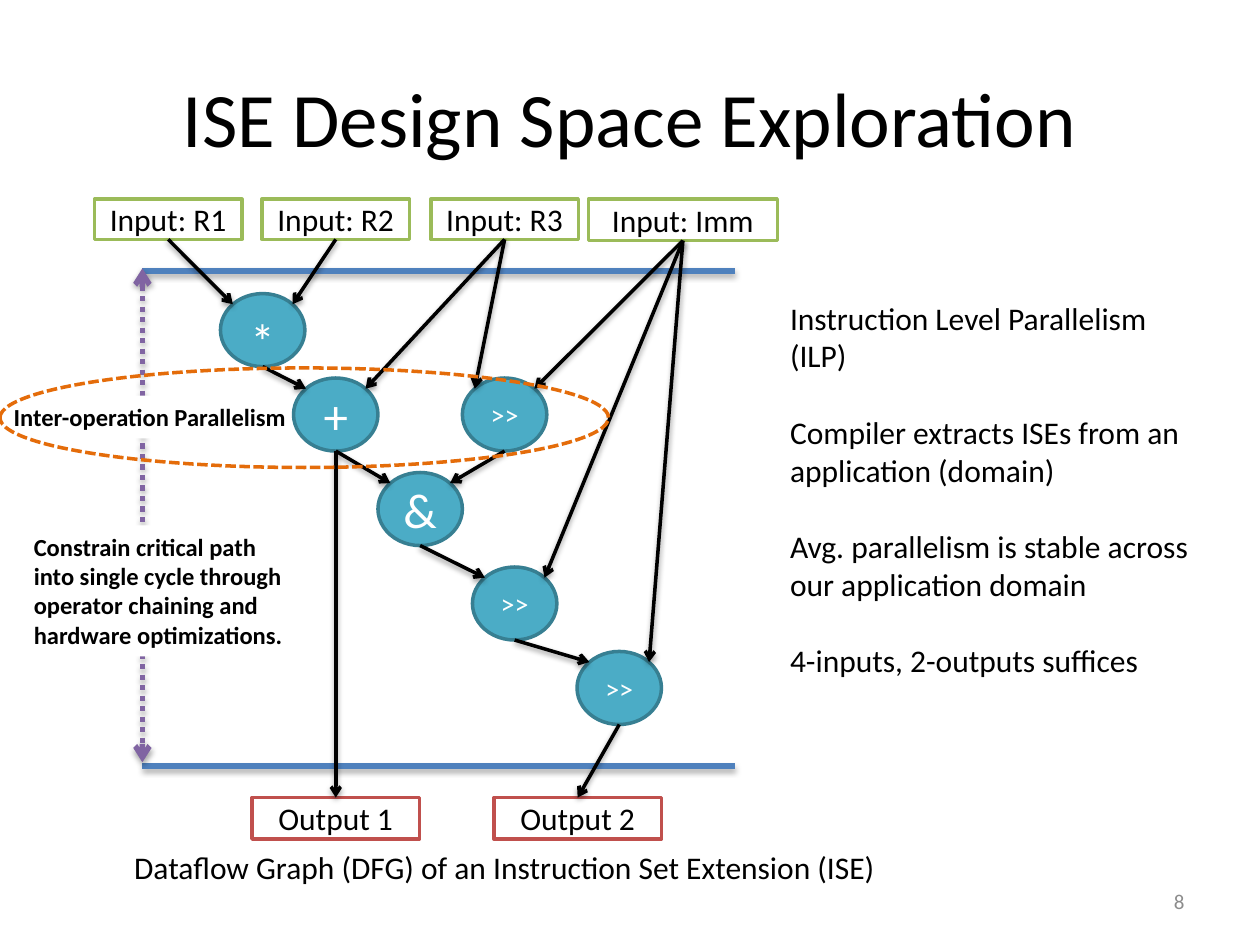
"""Build the ISE design space exploration slide with its dataflow graph."""
from math import sqrt

from lxml.etree import SubElement
from pptx import Presentation
from pptx.dml.color import RGBColor
from pptx.enum.dml import MSO_LINE
from pptx.enum.shapes import MSO_CONNECTOR, MSO_SHAPE
from pptx.enum.text import MSO_ANCHOR, MSO_AUTO_SIZE, PP_ALIGN
from pptx.oxml.ns import qn
from pptx.util import Inches, Pt

COLORS = {
    "black": "000000", "white": "FFFFFF", "gray": "8C8C8C", "blue": "4F81BD",
    "teal": "4BACC6", "dark teal": "377F92", "green": "9BBB59",
    "red": "C0504D", "purple": "8064A2", "orange": "E46C0A",
}
COLORS = {name: RGBColor.from_string(value) for name, value in COLORS.items()}


def write_text(box, text, size=18, color="black", bold=False,
               align=PP_ALIGN.LEFT, anchor=MSO_ANCHOR.MIDDLE, gap=0):
    frame = box.text_frame
    frame.word_wrap = True
    frame.auto_size = MSO_AUTO_SIZE.NONE
    frame.vertical_anchor = anchor
    frame.text = text
    for index, para in enumerate(frame.paragraphs):
        props = para._p.get_or_add_pPr()
        props.set("marL", "0")
        props.set("indent", "0")
        para.alignment = align
        para.space_before = Pt(gap if index else 0)
        SubElement(props, qn("a:buNone"))
        for span in para.runs:
            span.font.name = "Calibri"
            span.font.size = Pt(size)
            span.font.bold = bold
            span.font.color.rgb = COLORS[color]


def add_line(start, end, color="black", width=2, dash=None, ends=("tailEnd",), effect=1):
    line = page.shapes.add_connector(
        MSO_CONNECTOR.STRAIGHT, *(Inches(value) for value in (*start, *end)))
    line.line.color.rgb = COLORS[color]
    line.line.width = Pt(width)
    if dash:
        line.line.dash_style = dash
    for name in ends:
        SubElement(line.line._get_or_add_ln(), qn(f"a:{name}"), type="arrow")
    for reference in line._element.iter(qn("a:effectRef")):
        reference.set("idx", str(effect))
    return line


deck = Presentation()
deck.slide_width, deck.slide_height = Inches(10), Inches(7.5)
page = deck.slides.add_slide(deck.slide_layouts[1])

title, body = page.placeholders
title.left, title.top, title.width, title.height = map(Inches, (0.5, 0.3, 9, 1.25))
write_text(title, "ISE Design Space Exploration", size=44, align=PP_ALIGN.CENTER)

body.left, body.top, body.width, body.height = map(Inches, (6.17, 2.32, 3.42, 3.43))
findings = [
    "Instruction Level Parallelism (ILP)",
    "Compiler extracts ISEs from an application (domain)",
    "Avg. parallelism is stable across our application domain",
    "4-inputs, 2-outputs suffices",
]
write_text(body, "\n".join(findings), anchor=MSO_ANCHOR.TOP, gap=22)

for level in (2.15, 6.08):
    add_line((1.13, level), (5.83, level), "blue", 3, ends=(), effect=2)
add_line((1.13, 2.13), (1.13, 6.05), "purple", 3, MSO_LINE.ROUND_DOT,
         ("headEnd", "tailEnd"), effect=2)

labels = [
    ("Constrain critical path into single cycle through operator chaining "
     "and hardware optimizations.", (0.17, 4.17, 2.26, 1.04)),
    ("Inter-operation Parallelism", (0.01, 3.14, 2.41, 0.34)),
]
for text, place in labels:
    label = page.shapes.add_textbox(*map(Inches, place))
    label.fill.solid()
    label.fill.fore_color.rgb = COLORS["white"]
    write_text(label, text, size=14, bold=True, anchor=MSO_ANCHOR.TOP)

caption = page.shapes.add_textbox(*map(Inches, (0.42, 6.68, 7.17, 0.4)))
write_text(caption, "Dataflow Graph (DFG) of an Instruction Set Extension (ISE)",
           align=PP_ALIGN.CENTER, anchor=MSO_ANCHOR.TOP)
number = page.shapes.add_textbox(*map(Inches, (7.17, 6.95, 2.33, 0.4)))
write_text(number, "8", size=12, color="gray", align=PP_ALIGN.RIGHT)

ports = [
    ("Input: R1", 0.75, 1.58, 1.17, 0.32, "green"),
    ("Input: R2", 2.08, 1.58, 1.17, 0.32, "green"),
    ("Input: R3", 3.42, 1.58, 1.17, 0.32, "green"),
    ("Input: Imm", 4.67, 1.58, 1.5, 0.33, "green"),
    ("Output 1", 2, 6.33, 1.33, 0.33, "red"),
    ("Output 2", 3.92, 6.33, 1.33, 0.33, "red"),
]
port_boxes = {}
for text, left, top, width, height, color in ports:
    box = page.shapes.add_shape(
        MSO_SHAPE.RECTANGLE, *map(Inches, (left, top, width, height)))
    box.shadow.inherit = False
    box.fill.solid()
    box.fill.fore_color.rgb = COLORS["white"]
    box.line.color.rgb = COLORS[color]
    box.line.width = Pt(2)
    write_text(box, text, align=PP_ALIGN.CENTER)
    port_boxes[text] = box

NODE_WIDTH, NODE_HEIGHT = 0.67, 0.58
nodes = {
    "multiply": ("*", 28, 1.75, 2.33),
    "add": ("+", 28, 2.33, 3),
    "shift 1": (">>", 16, 3.67, 3),
    "and": ("&", 28, 3, 3.75),
    "shift 2": (">>", 16, 3.75, 4.5),
    "shift 3": (">>", 16, 4.58, 5.17),
}
centers = {}
for name, (text, size, left, top) in nodes.items():
    node = page.shapes.add_shape(
        MSO_SHAPE.OVAL, *map(Inches, (left, top, NODE_WIDTH, NODE_HEIGHT)))
    node.shadow.inherit = False
    node.fill.solid()
    node.fill.fore_color.rgb = COLORS["teal"]
    node.line.color.rgb = COLORS["dark teal"]
    node.line.width = Pt(2)
    anchor = MSO_ANCHOR.TOP if text == "*" else MSO_ANCHOR.MIDDLE
    write_text(node, text, size=size, color="white", align=PP_ALIGN.CENTER, anchor=anchor)
    centers[name] = (left + NODE_WIDTH / 2, top + NODE_HEIGHT / 2)

LEFT, RIGHT = -1, 1
edges = [
    ("Input: R1", "multiply", LEFT), ("Input: R2", "multiply", RIGHT),
    ("multiply", "add", LEFT), ("Input: R3", "add", RIGHT),
    ("Input: R3", "shift 1", LEFT), ("Input: Imm", "shift 1", RIGHT),
    ("Input: Imm", "shift 2", RIGHT), ("Input: Imm", "shift 3", RIGHT),
    ("add", "and", LEFT), ("shift 1", "and", RIGHT),
    ("and", "shift 2", LEFT), ("shift 2", "shift 3", LEFT),
    ("add", "Output 1", None), ("shift 3", "Output 2", None),
]
for source, target, side in edges:
    start = end = (0, 0)
    if source in centers:
        x, y = centers[source]
        start = (x, y + NODE_HEIGHT / 2)
    if target in centers:
        x, y = centers[target]
        end = (x + side * NODE_WIDTH / sqrt(8), y - NODE_HEIGHT / sqrt(8))
    edge = add_line(start, end)
    if source in port_boxes:
        edge.begin_connect(port_boxes[source], 2)
    if target in port_boxes:
        edge.end_connect(port_boxes[target], 0)

ring = page.shapes.add_shape(MSO_SHAPE.OVAL, *map(Inches, (0, 2.92, 4.83, 0.79)))
ring.shadow.inherit = False
ring.fill.background()
ring.line.color.rgb = COLORS["orange"]
ring.line.width = Pt(2)
ring.line.dash_style = MSO_LINE.SQUARE_DOT

deck.save("out.pptx")
